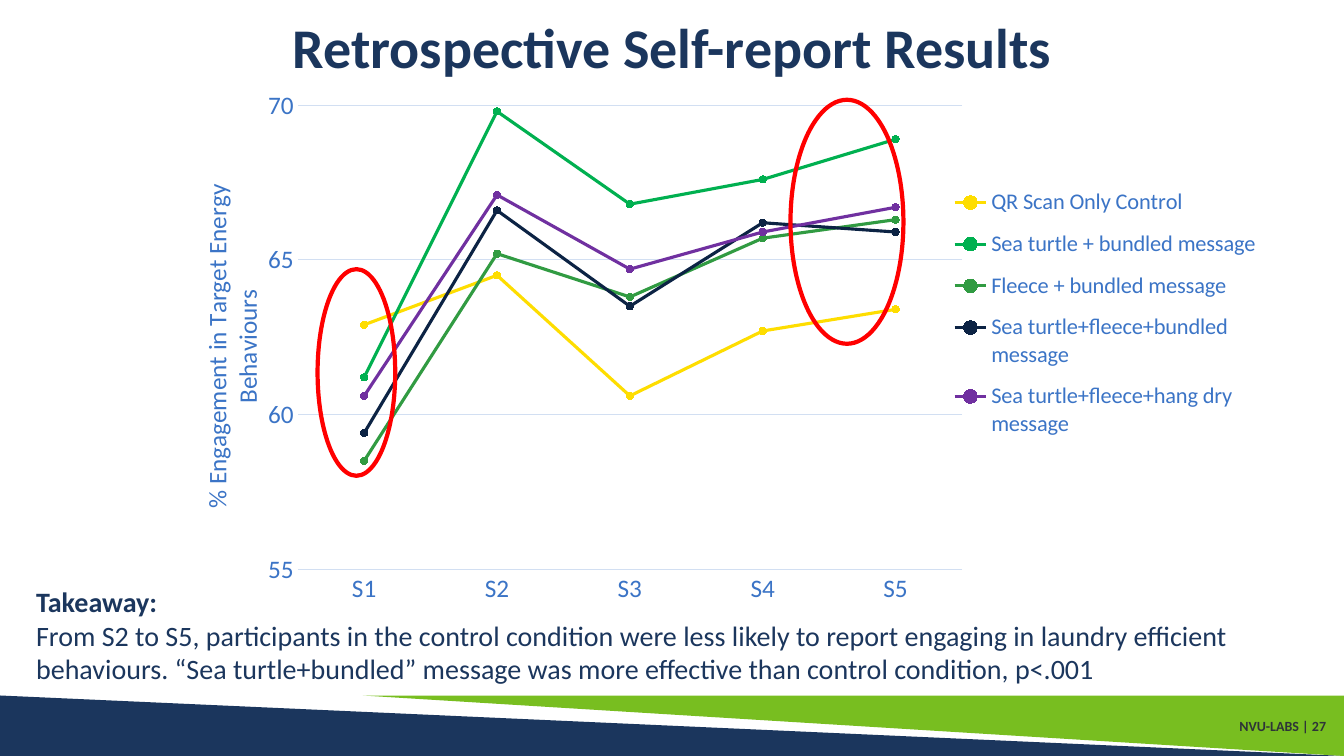
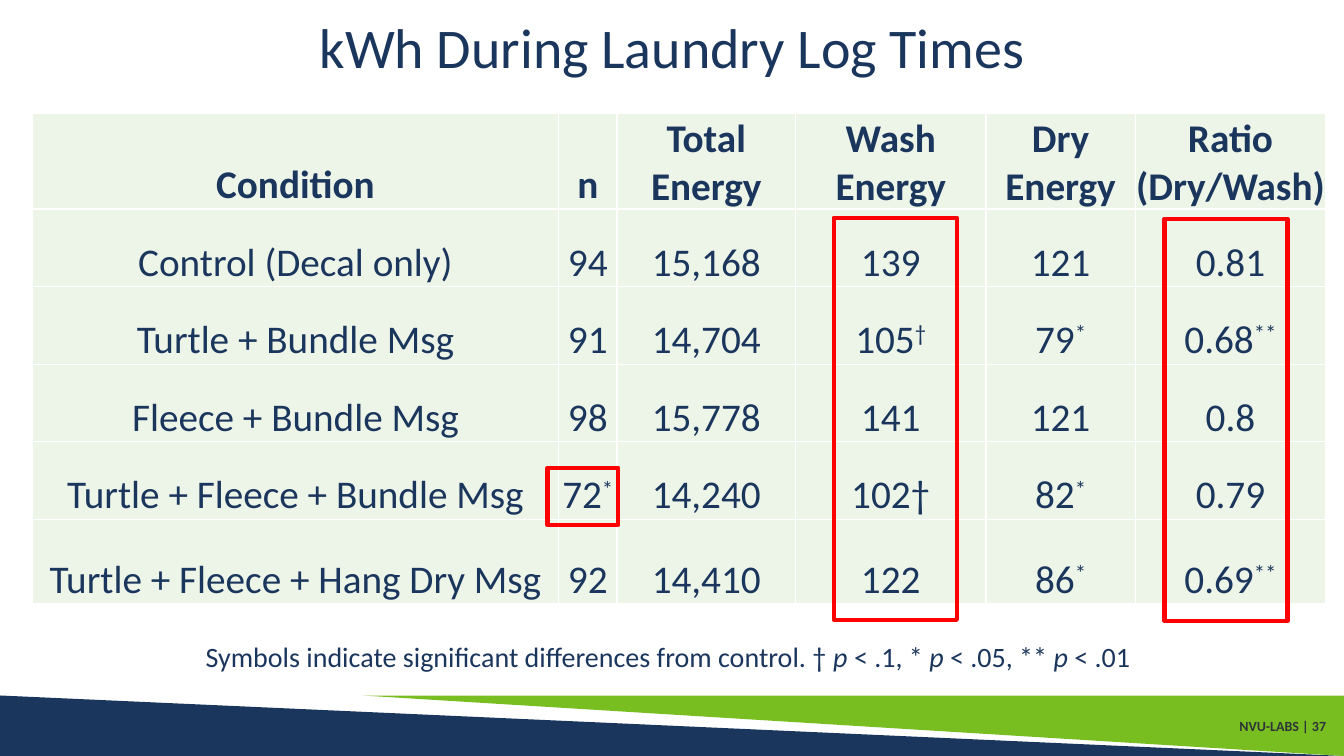
from dataclasses import dataclass

from lxml.etree import SubElement
from pptx import Presentation
from pptx.chart.data import CategoryChartData
from pptx.dml.color import RGBColor
from pptx.enum.chart import XL_CHART_TYPE, XL_LEGEND_POSITION, XL_MARKER_STYLE, XL_TICK_MARK
from pptx.enum.shapes import MSO_SHAPE
from pptx.enum.text import MSO_ANCHOR, PP_ALIGN
from pptx.oxml import parse_xml
from pptx.oxml.ns import nsdecls, qn
from pptx.util import Pt

PX = 9144  # EMU per px, 100 px to the inch


@dataclass(frozen=True)
class Theme:
    font: str = "Calibri"
    navy: str = "1B365D"
    green: str = "78BE20"
    footer: str = "2E3438"
    chart_text: str = "3B74C6"
    grid: str = "D2DFF2"
    cell: str = "EDF4E8"
    border: str = "FFFFFF"
    mark: str = "FF0000"
    title_pt: int = 40
    table_pt: int = 28
    body_pt: int = 20
    axis_pt: int = 18
    legend_pt: int = 16
    footer_pt: int = 10


def rgb(value):
    return RGBColor.from_string(value)


def px(*lengths):
    return [n * PX for n in lengths]


class Deck:
    def __init__(self, theme):
        self.t = theme
        self.prs = Presentation()
        self.prs.slide_width, self.prs.slide_height = px(1333, 750)
        self.s = None

    def style(self, font, size, color, bold=False):
        font.name, font.size, font.bold = self.t.font, Pt(size), bold
        font.color.rgb = rgb(color)

    def slide(self, title, number, bold=False):
        self.s = self.prs.slides.add_slide(self.prs.slide_layouts[5])
        # Title
        sp = self.s.shapes.title
        sp.left, sp.top, sp.width, sp.height = px(0, 0, 1333, 99)
        tf = sp.text_frame
        tf.vertical_anchor = MSO_ANCHOR.MIDDLE
        p = tf.paragraphs[0]
        p.text, p.alignment, p.line_spacing = title, PP_ALIGN.CENTER, 0.9
        self.style(p.font, self.t.title_pt, self.t.navy, bold)
        # Bands and footer
        self.shape(MSO_SHAPE.RIGHT_TRIANGLE, (0, 690, 1333, 60), fill=self.t.navy)
        self.shape(MSO_SHAPE.RIGHT_TRIANGLE, (360, 690, 973, 60), fill=self.t.green).rotation = 180
        tf = self.text((1174, 702, 151, 37), [[f"NVU-LABS | {number}"]],
                       self.t.footer_pt, self.t.footer, bold=(0,))
        tf.vertical_anchor = MSO_ANCHOR.MIDDLE
        tf.paragraphs[0].alignment = PP_ALIGN.RIGHT

    def shape(self, kind, box, fill=None, line=None):
        sp = self.s.shapes.add_shape(kind, *px(*box))
        sp.shadow.inherit = False
        if fill:
            sp.fill.solid()
            sp.fill.fore_color.rgb = rgb(fill)
        else:
            sp.fill.background()
        if line:
            sp.line.color.rgb, sp.line.width = rgb(line), Pt(3)
        else:
            sp.line.fill.background()
        return sp

    def highlight(self, kind, *boxes):
        for box in boxes:
            self.shape(kind, box, line=self.t.mark)

    def text(self, box, paragraphs, size, color, bold=(), wrap=True):
        """Paragraphs are lists of runs; every second run is italic."""
        tf = self.s.shapes.add_textbox(*px(*box)).text_frame
        tf.word_wrap = wrap
        for i, runs in enumerate(paragraphs):
            p = tf.add_paragraph() if i else tf.paragraphs[0]
            self.style(p.font, size, color, i in bold)
            for j, words in enumerate(runs):
                r = p.add_run()
                r.text = words
                if j % 2:
                    r.font.italic = True
        return tf

    def table(self, origin, cols, heights, rows):
        """The part of a cell's text after ^ is superscript."""
        box = px(*origin, sum(cols), sum(heights))
        table = self.s.shapes.add_table(len(rows), len(cols), *box).table
        table.first_row = table.horz_banding = False
        for col, width in zip(table.columns, px(*cols)):
            col.width = width
        for row, height in zip(table.rows, px(*heights)):
            row.height = height
        for i, row in enumerate(rows):
            for j, value in enumerate(row):
                self.cell(table.cell(i, j), value, bold=i == 0)

    def cell(self, cell, value, bold):
        cell.margin_left = cell.margin_right = cell.margin_top = PX
        cell.margin_bottom = 0
        cell.vertical_anchor = MSO_ANCHOR.BOTTOM
        p = cell.text_frame.paragraphs[0]
        p.alignment = PP_ALIGN.CENTER
        self.style(p.font, self.t.table_pt, self.t.navy, bold)
        for k, words in enumerate(value.split("^")):
            r = p.add_run()
            r.text = words
            if k:
                r._r.get_or_add_rPr().set("baseline", "30000")
        tcPr = cell._tc.get_or_add_tcPr()
        for side in ("a:lnL", "a:lnR", "a:lnT", "a:lnB"):
            ln = SubElement(tcPr, qn(side), w=str(Pt(1)))
            fill = SubElement(ln, qn("a:solidFill"))
            SubElement(fill, qn("a:srgbClr"), val=self.t.border)
        cell.fill.solid()
        cell.fill.fore_color.rgb = rgb(self.t.cell)

    def line_chart(self, box, cats, series, axis_title, low, high, step):
        data = CategoryChartData()
        data.categories = cats
        for name, _, values in series:
            data.add_series(name, values)
        chart = self.s.shapes.add_chart(XL_CHART_TYPE.LINE_MARKERS, *px(*box), data).chart
        t = self.t
        self.style(chart.font, t.axis_pt, t.chart_text)
        chart.has_title = False
        # Lines and markers
        plot = chart.plots[0]
        plot.vary_by_categories = False
        for ser, (_, color, _) in zip(plot.series, series):
            ser.smooth = False
            ser.format.line.color.rgb, ser.format.line.width = rgb(color), Pt(2.25)
            ser.marker.style, ser.marker.size = XL_MARKER_STYLE.CIRCLE, 5
            ser.marker.format.fill.solid()
            ser.marker.format.fill.fore_color.rgb = rgb(color)
            ser.marker.format.line.color.rgb = rgb(color)
        # Axes
        cat, val = chart.category_axis, chart.value_axis
        for axis in (cat, val):
            axis.major_tick_mark = axis.minor_tick_mark = XL_TICK_MARK.NONE
            self.style(axis.tick_labels.font, t.axis_pt, t.chart_text)
        val.minimum_scale, val.maximum_scale, val.major_unit = low, high, step
        val.tick_labels.number_format, val.tick_labels.number_format_is_linked = "0", False
        val.format.line.fill.background()
        for line in (cat.format.line, val.major_gridlines.format.line):
            line.color.rgb, line.width = rgb(t.grid), Pt(0.75)
        p = val.axis_title.text_frame.paragraphs[0]
        p.text = axis_title
        self.style(p.font, t.axis_pt, t.chart_text)
        # Legend
        chart.has_legend = True
        legend = chart.legend
        legend.position, legend.include_in_layout = XL_LEGEND_POSITION.RIGHT, False
        self.style(legend.font, t.legend_pt, t.chart_text)
        # Places within the chart
        plot_area = chart._chartSpace.chart.plotArea
        for old in plot_area.findall(qn("c:layout")):
            plot_area.remove(old)
        plot_area.insert(0, layout(inner=True, x=0.12, y=0.05, w=0.58, h=0.87))
        for part, place in ((val.axis_title._element, layout(x=0.03, y=0.19)),
                            (legend._element, layout(x=0.68, y=0.18, w=0.29, h=0.52))):
            for old in part.findall(qn("c:layout")):
                part.remove(old)
            part.find(qn("c:overlay")).addprevious(place)


def layout(inner=False, **place):
    target = '<c:layoutTarget val="inner"/>' if inner else ""
    modes = "".join(f'<c:{k}Mode val="edge"/>' for k in place if k in "xy")
    sizes = "".join(f'<c:{k} val="{v}"/>' for k, v in place.items())
    return parse_xml(f'<c:layout {nsdecls("c")}><c:manualLayout>{target}{modes}{sizes}'
                     "</c:manualLayout></c:layout>")


def main():
    t = Theme()
    deck = Deck(t)

    # Self-report chart
    deck.slide("Retrospective Self-report Results", 27, bold=True)
    deck.line_chart(
        (159, 78, 1136, 529), ["S1", "S2", "S3", "S4", "S5"],
        [("QR Scan Only Control", "FEDD00", (62.9, 64.5, 60.6, 62.7, 63.4)),
         ("Sea turtle + bundled message", "00B050", (61.2, 69.8, 66.8, 67.6, 68.9)),
         ("Fleece + bundled message", "319B42", (58.5, 65.2, 63.8, 65.7, 66.3)),
         ("Sea turtle+fleece+bundled message", "0C2344", (59.4, 66.6, 63.5, 66.2, 65.9)),
         ("Sea turtle+fleece+hang dry message", "7030A0", (60.6, 67.1, 64.7, 65.9, 66.7))],
        "% Engagement in Target Energy Behaviours", 55, 70, 5)
    deck.text((26, 575, 1314, 111), [
        ["Takeaway:"],
        ["From S2 to S5, participants in the control condition were less likely to report "
         "engaging in laundry efficient behaviours. “Sea turtle+bundled” message was more "
         "effective than control condition, p<.001"]], t.body_pt, t.navy, bold=(0,))
    deck.highlight(MSO_SHAPE.OVAL, (315, 267, 77, 205), (784, 99, 112, 242))

    # Energy table
    deck.slide("kWh During Laundry Log Times", 37)
    deck.text((194, 630, 946, 44), [
        ["Symbols indicate significant differences from control. † ", "p ", "< .1, * ", "p",
         " < .05, ** ", "p", " < .01"]], t.body_pt, t.navy, wrap=False)
    deck.table((32, 113), (522, 58, 177, 189, 148, 189), (86, 77, 77, 77, 77, 84), [
        ("Condition", "n", "Total Energy", "Wash Energy", "Dry Energy", "Ratio (Dry/Wash)"),
        ("Control (Decal only)", "94", "15,168", "139", "121", "0.81"),
        ("Turtle + Bundle Msg", "91", "14,704", "105^†", "79^*", "0.68^**"),
        ("Fleece + Bundle Msg", "98", "15,778", "141", "121", "0.8"),
        ("Turtle + Fleece + Bundle Msg", "72^*", "14,240", "102†", "82^*", "0.79"),
        ("Turtle + Fleece + Hang Dry Msg", "92", "14,410", "122", "86^*", "0.69^**")])
    deck.highlight(MSO_SHAPE.RECTANGLE, (543, 464, 70, 57),
                   (827, 216, 122, 399), (1155, 217, 122, 399))

    deck.prs.save("out.pptx")


if __name__ == "__main__":
    main()
